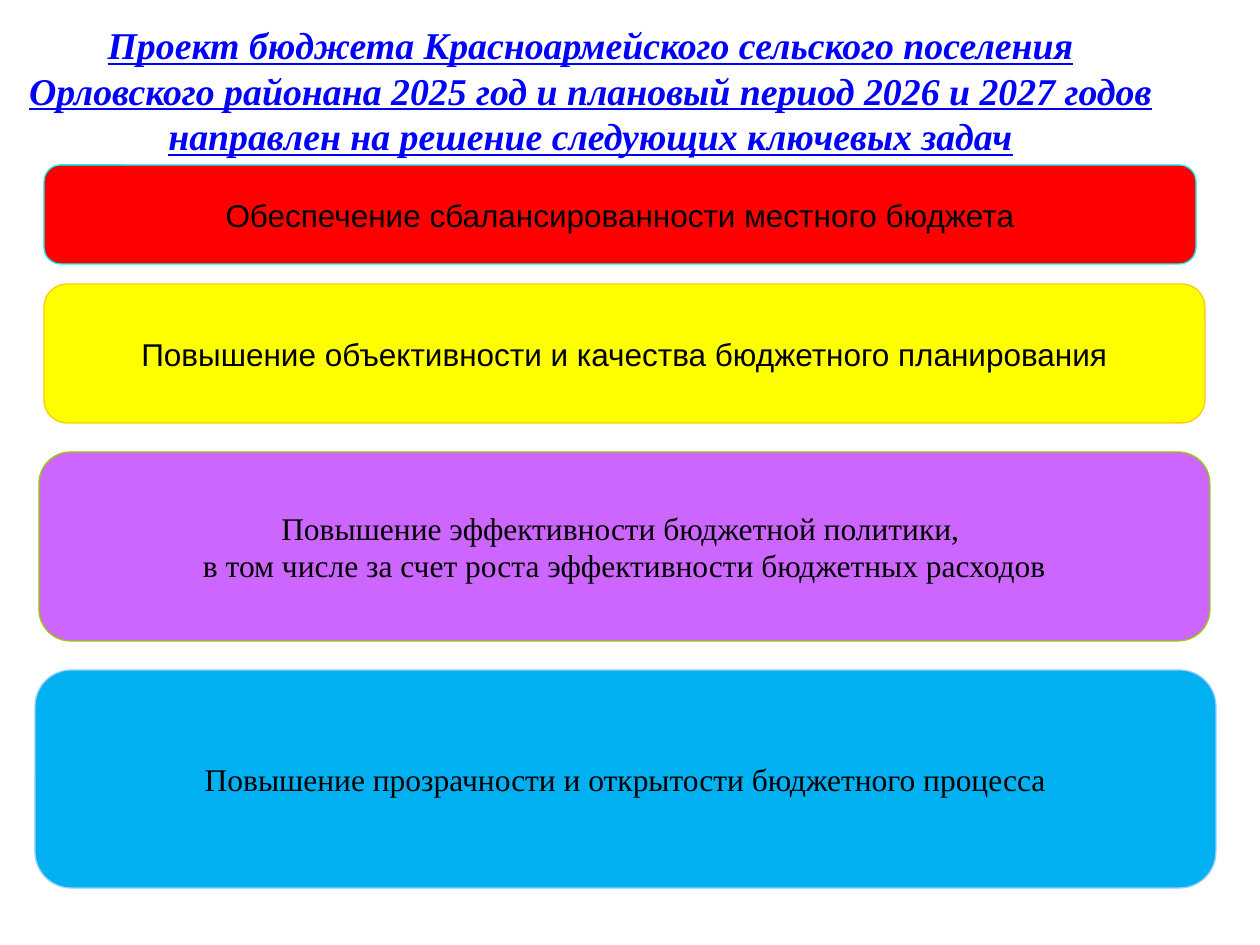
from typing import NamedTuple

from pptx import Presentation
from pptx import util as u
from pptx.dml.color import RGBColor
from pptx.enum import shapes, text

PX_PER_INCH = 126
BLACK = RGBColor(0x00, 0x00, 0x00)
BLUE = RGBColor(0x00, 0x00, 0xFF)
RED = RGBColor(0xFF, 0x00, 0x00)
CYAN = RGBColor(0x00, 0xFF, 0xFF)
YELLOW = RGBColor(0xFF, 0xFF, 0x00)
GOLD = RGBColor(0xFF, 0xCC, 0x00)
PURPLE = RGBColor(0xCC, 0x66, 0xFF)
GREEN = RGBColor(0x99, 0xCC, 0x00)
AZURE = RGBColor(0x00, 0xB0, 0xF0)
PALE_BLUE = RGBColor(0x99, 0xCC, 0xFF)
SANS = "Arial"
SERIF = "Times New Roman"

HEADING = (
    "Проект бюджета Красноармейского сельского поселения Орловского районана "
    "2025 год и плановый период 2026 и 2027 годов направлен на решение "
    "следующих ключевых задач"
)


class Box(NamedTuple):
    left: int
    top: int
    width: int
    height: int


class Task(NamedTuple):
    wording: str
    box: Box
    fill: RGBColor
    outline: RGBColor
    font: str


TASKS = [
    Task("Обеспечение сбалансированности местного бюджета",
         Box(44, 165, 1152, 99), RED, CYAN, SANS),
    Task("Повышение объективности и качества бюджетного планирования",
         Box(44, 284, 1161, 139), YELLOW, GOLD, SANS),
    Task("Повышение эффективности бюджетной политики, \n"
         "в том числе за счет роста эффективности бюджетных расходов",
         Box(39, 452, 1171, 189), PURPLE, GREEN, SERIF),
    Task("Повышение прозрачности и открытости бюджетного процесса",
         Box(35, 670, 1181, 218), AZURE, PALE_BLUE, SERIF),
]


def px(length: int) -> int:
    return round(length * u.Inches(1) / PX_PER_INCH)


def write(frame, wording: str, font: str, size: float, color: RGBColor,
          wrap: bool, emphasis: bool = False) -> None:
    """Centre the wording; emphasis makes it bold, italic and underlined."""
    frame.text = wording
    frame.word_wrap = wrap
    frame.vertical_anchor = text.MSO_ANCHOR.MIDDLE
    for paragraph in frame.paragraphs:
        paragraph.alignment = text.PP_ALIGN.CENTER
        for run in paragraph.runs:
            run.font.name = font
            run.font.size = u.Pt(size)
            run.font.color.rgb = color
            run.font.bold = run.font.italic = run.font.underline = emphasis


def draw_heading(slide, box: Box) -> None:
    heading = slide.shapes.add_textbox(*map(px, box))
    write(heading.text_frame, HEADING, SERIF, 21.6, BLUE, wrap=True, emphasis=True)


def draw_task(slide, task: Task) -> None:
    panel = slide.shapes.add_shape(
        shapes.MSO_SHAPE.ROUNDED_RECTANGLE, *map(px, task.box))
    panel.shadow.inherit = False
    panel.fill.solid()
    panel.fill.fore_color.rgb = task.fill
    panel.line.color.rgb = task.outline
    panel.line.width = u.Pt(0.75)
    write(panel.text_frame, task.wording, task.font, 18, BLACK, wrap=False)


def main() -> None:
    deck = Presentation()
    deck.slide_width, deck.slide_height = px(1260), px(945)
    slide = deck.slides.add_slide(deck.slide_layouts[6])
    draw_heading(slide, Box(0, 35, 1181, 110))
    for task in TASKS:
        draw_task(slide, task)
    deck.save("out.pptx")


if __name__ == "__main__":
    main()
